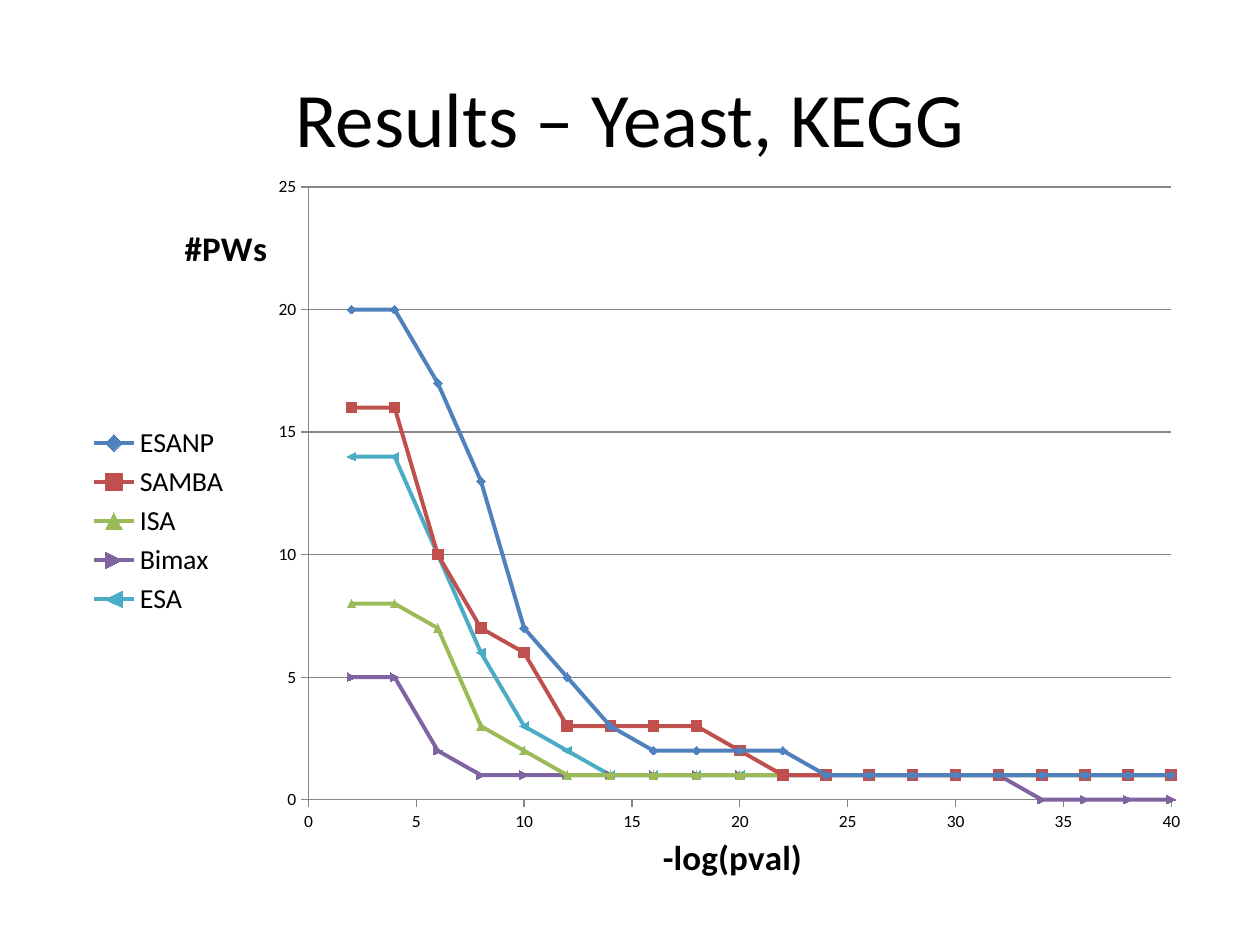
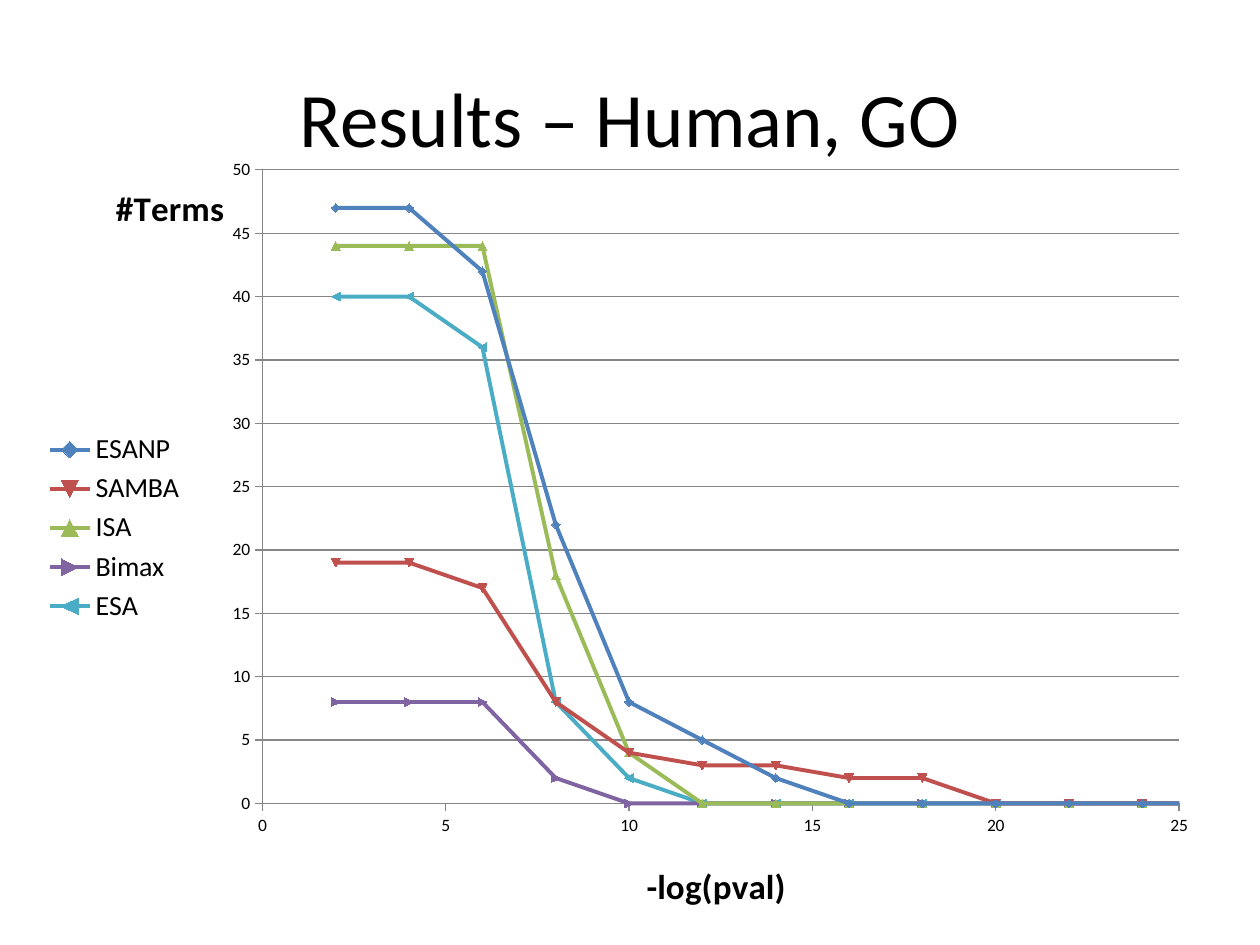
from lxml.etree import SubElement
from pptx import Presentation
from pptx.chart.data import XyChartData
from pptx.dml.color import RGBColor
from pptx.enum.chart import XL_CHART_TYPE, XL_LEGEND_POSITION, XL_MARKER_STYLE, XL_TICK_MARK
from pptx.enum.text import MSO_ANCHOR, PP_ALIGN
from pptx.oxml.ns import qn
from pptx.util import Inches, Pt

# Content: values run from the highest -log(pval) down to 2, in steps of 2
STEP = 2
X_NAME = "-log(pval)"
SLIDES = [
    {
        "title": "Results – Yeast, KEGG",
        "y_name": "#PWs",
        "x_max": 40,
        "box": (0.59, 1.31, 9.06, 5.75),
        "plot": (0.205, 0.031, 0.756, 0.86),
        "x_at": (0.51, 0.928),
        "y_at": (0.091, 0.073),
        "squares": ["SAMBA"],
        "rows": {
            "ESANP": [1] * 39 + [2] * 4 + [3, 5, 7, 13, 17, 20, 20],
            "SAMBA": [1] * 40 + [2] + [3] * 4 + [6, 7, 10, 16, 16],
            "ISA": [0] * 2 + [1] * 43 + [2, 3, 7, 8, 8],
            "Bimax": [0] * 34 + [1] * 13 + [2, 5, 5],
            "ESA": [1] * 44 + [2, 3, 6, 10, 14, 14],
        },
    },
    {
        "title": "Results – Human, GO",
        "y_name": "#Terms",
        "x_max": 25,
        "box": (0.24, 1.18, 9.4, 6.11),
        "plot": (0.196, 0.028, 0.774, 0.835),
        "x_at": (0.515, 0.931),
        "y_at": (0.067, 0.038),
        "squares": [],
        "rows": {
            "ESANP": [0] * 8 + [2, 5, 8, 22, 42, 47, 47],
            "SAMBA": [0] * 6 + [2, 2, 3, 3, 4, 8, 17, 19, 19],
            "ISA": [0] * 10 + [4, 18, 44, 44, 44],
            "Bimax": [0] * 11 + [2, 8, 8, 8],
            "ESA": [0] * 10 + [2, 8, 36, 40, 40],
        },
    },
]

# Shared style
FONT = "Calibri"
BLACK = RGBColor(0x00, 0x00, 0x00)
GREY = RGBColor(0x86, 0x86, 0x86)
HUES = {
    "ESANP": RGBColor(0x4F, 0x81, 0xBD),
    "SAMBA": RGBColor(0xC0, 0x50, 0x4D),
    "ISA": RGBColor(0x9B, 0xBB, 0x59),
    "Bimax": RGBColor(0x80, 0x64, 0xA2),
    "ESA": RGBColor(0x4B, 0xAC, 0xC6),
}


def style(font, size, bold=False):
    font.name, font.size, font.bold = FONT, Pt(size), bold
    font.color.rgb = BLACK


def stroke(line, color, width):
    line.color.rgb = color
    line.width = Pt(width)


def place(part, shares, inner=False):
    """Fix a chart part at x, y (and w, h) as shares of the chart."""
    frame = part.find(qn("c:layout"))
    if frame is None:
        frame = part.makeelement(qn("c:layout"))
        part.insert(0 if part.find(qn("c:tx")) is None else 1, frame)
    spot = SubElement(frame, qn("c:manualLayout"))
    if inner:
        SubElement(spot, qn("c:layoutTarget")).set("val", "inner")
    keys = "xywh"[:len(shares)]
    for key in keys[:2]:
        SubElement(spot, qn(f"c:{key}Mode")).set("val", "edge")
    for key, share in zip(keys, shares):
        SubElement(spot, qn(f"c:{key}")).set("val", str(share))


def set_axis(axis, name, spot, grid):
    axis.has_major_gridlines = grid
    if grid:
        stroke(axis.major_gridlines.format.line, GREY, 0.75)
    axis.major_tick_mark = XL_TICK_MARK.OUTSIDE
    axis.minor_tick_mark = XL_TICK_MARK.NONE
    axis.minimum_scale = 0
    stroke(axis.format.line, GREY, 0.75)
    style(axis.tick_labels.font, 10)
    title = axis.axis_title
    title.text_frame.text = name
    style(title.text_frame.paragraphs[0].runs[0].font, 20, True)
    # Keep both axis names level
    body = title._element.find(".//" + qn("a:bodyPr"))
    body.set("rot", "0")
    body.set("vert", "horz")
    place(title._element, spot)


def add_title(slide, text):
    title = slide.shapes.title
    title.left, title.top, title.width, title.height = map(Inches, (0.5, 0.3, 9, 1.25))
    frame = title.text_frame
    frame.text = text
    frame.vertical_anchor = MSO_ANCHOR.MIDDLE
    para = frame.paragraphs[0]
    para.alignment = PP_ALIGN.CENTER
    style(para.runs[0].font, 44)


def add_plot(slide, item):
    data = XyChartData()
    for name, vals in item["rows"].items():
        row = data.add_series(name)
        for i, val in enumerate(vals):
            row.add_data_point(STEP * (len(vals) - i), val)
    chart = slide.shapes.add_chart(
        XL_CHART_TYPE.XY_SCATTER_LINES, *map(Inches, item["box"]), data).chart
    style(chart.font, 10)
    chart.has_title = False

    # Legend and axes
    chart.has_legend = True
    chart.legend.position = XL_LEGEND_POSITION.LEFT
    chart.legend.include_in_layout = False
    style(chart.legend.font, 16)
    set_axis(chart.category_axis, X_NAME, item["x_at"], False)
    set_axis(chart.value_axis, item["y_name"], item["y_at"], True)
    chart.category_axis.maximum_scale = item["x_max"]

    # Lines and markers
    plot = chart.plots[0]
    plot.vary_by_categories = False
    for row in plot.series:
        hue = HUES[row.name]
        row.smooth = False
        stroke(row.format.line, hue, 2.25)
        if row.name in item["squares"]:
            row.marker.style = XL_MARKER_STYLE.SQUARE
            row.marker.size = 6
            row.marker.format.fill.solid()
            row.marker.format.fill.fore_color.rgb = hue
    area = chart._chartSpace.find(".//" + qn("c:plotArea"))
    place(area, item["plot"], inner=True)


def main():
    deck = Presentation()
    deck.slide_width, deck.slide_height = Inches(10), Inches(7.5)
    for item in SLIDES:
        slide = deck.slides.add_slide(deck.slide_layouts[5])
        add_title(slide, item["title"])
        add_plot(slide, item)
    deck.save("out.pptx")


if __name__ == "__main__":
    main()
